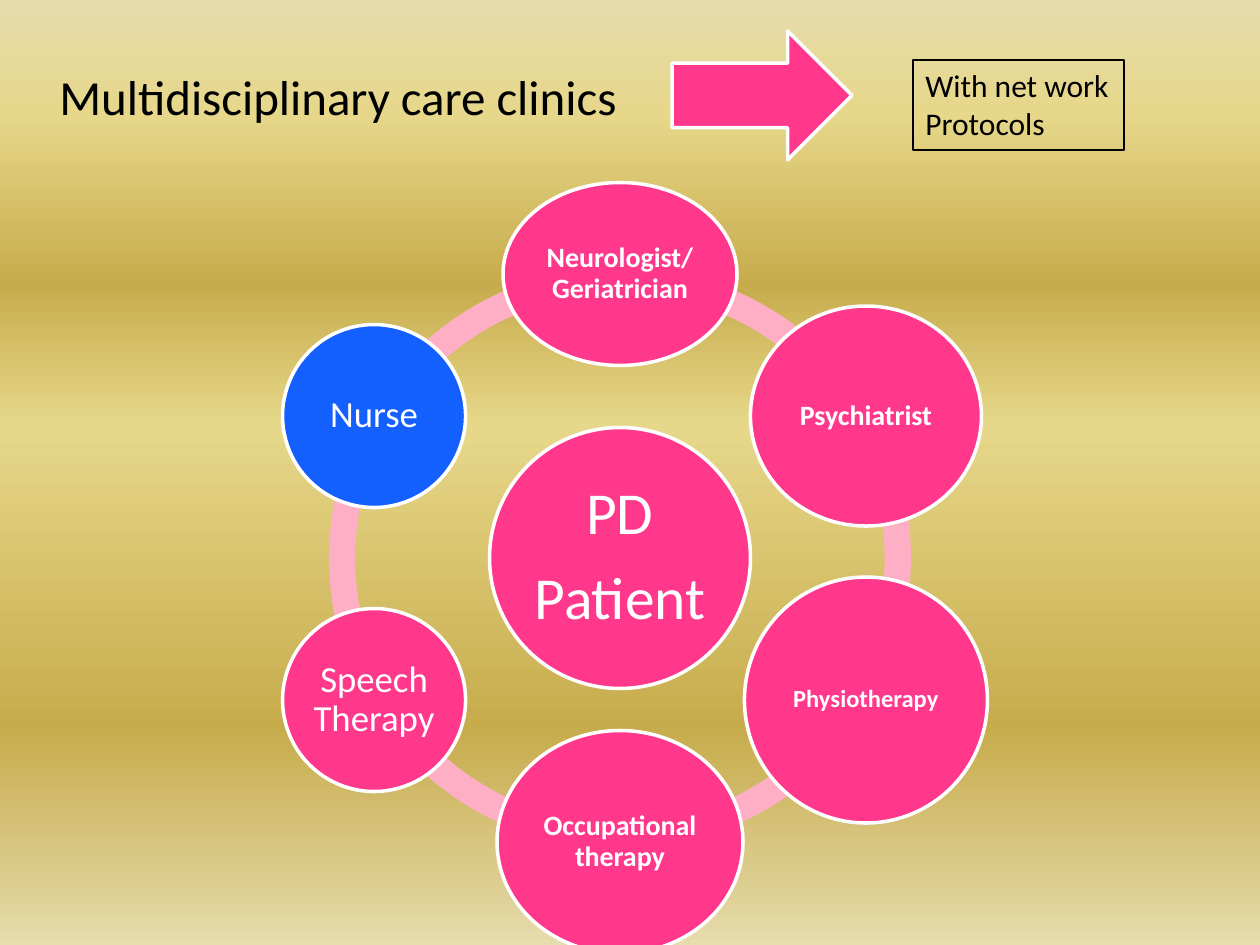
import math

from lxml import etree
from pptx import Presentation
from pptx import util as u
from pptx.dml.color import RGBColor
from pptx.enum import shapes, text
from pptx.oxml.ns import qn

EMU_PER_PX = 914400 / 126
WIDTH, HEIGHT = 1260, 945
HUB = (620, 558)
ORBIT = 284
RING_SIZE = 582

COLORS = {
    "pink": "FF388C",
    "pale_pink": "FFAFC5",
    "blue": "1460FF",
    "white": "FFFFFF",
    "black": "000000",
}
BACKDROP = [(0, "E6DCAC"), (12, "E6D78A"), (30, "C7AC4C"),
            (45, "E6D78A"), (77, "C7AC4C"), (100, "E6DCAC")]

# Clockwise from the top: label, width, height, font size, bold, fill
TEAM = [
    ("Neurologist/Geriatrician", 234, 183, 16, True, "pink"),
    ("Psychiatrist", 231, 220, 16, True, "pink"),
    ("Physiotherapy", 243, 246, 14, True, "pink"),
    ("Occupational therapy", 246, 223, 16, True, "pink"),
    ("Speech Therapy", 183, 183, 21, False, "pink"),
    ("Nurse", 183, 183, 21, False, "blue"),
]


def px(length):
    return u.Emu(round(length * EMU_PER_PX))


def rgb(name):
    return RGBColor.from_string(COLORS[name])


def write(frame, lines, size, color="black", bold=False, align=None,
          spacing=None, gap=0):
    """Fill a text frame, one paragraph per line, with gap points between."""
    for i, line in enumerate(lines):
        paragraph = frame.paragraphs[0] if i == 0 else frame.add_paragraph()
        paragraph.alignment = align
        paragraph.line_spacing = spacing
        if i:
            paragraph.space_before = u.Pt(gap)
        run = paragraph.add_run()
        run.text = line
        run.font.name = "Calibri"
        run.font.size = u.Pt(size)
        run.font.bold = bold
        run.font.color.rgb = rgb(color)


def paint_backdrop(slide):
    fill = slide.background.fill
    fill.gradient()
    fill.gradient_angle = 270
    stops = slide.element.find(".//" + qn("a:gsLst"))
    for stop in list(stops):
        stops.remove(stop)
    for percent, color in BACKDROP:
        stop = etree.SubElement(stops, qn("a:gs"), pos=str(percent * 1000))
        etree.SubElement(stop, qn("a:srgbClr"), val=color)


def add_solid(slide, kind, left, top, width, height, fill, outlined=True):
    solid = slide.shapes.add_shape(
        kind, px(left), px(top), px(width), px(height))
    solid.shadow.inherit = False
    solid.fill.solid()
    solid.fill.fore_color.rgb = rgb(fill)
    if outlined:
        solid.line.color.rgb = rgb("white")
        solid.line.width = u.Pt(2)
    else:
        solid.line.fill.background()
    return solid


def add_ring(slide):
    """Six 60 degree arcs; adjustments count 100000 per unit, 60000 per degree."""
    for i in range(6):
        start = (210 + 60 * i) % 360
        arc = add_solid(slide, shapes.MSO_SHAPE.BLOCK_ARC,
                        HUB[0] - RING_SIZE / 2, HUB[1] - RING_SIZE / 2,
                        RING_SIZE, RING_SIZE, "pale_pink", outlined=False)
        arc.adjustments[0] = start * 0.6
        arc.adjustments[1] = (start + 60) % 360 * 0.6
        arc.adjustments[2] = 0.045


def add_circle(slide, center, width, height, lines, size, bold=False,
               fill="pink", inset=3, gap=0):
    circle = add_solid(slide, shapes.MSO_SHAPE.OVAL, center[0] - width / 2,
                       center[1] - height / 2, width, height, fill)
    frame = circle.text_frame
    frame.word_wrap = True
    frame.vertical_anchor = text.MSO_ANCHOR.MIDDLE
    frame.margin_left = frame.margin_right = px(inset)
    frame.margin_top = frame.margin_bottom = px(inset)
    write(frame, lines, size, color="white", bold=bold,
          align=text.PP_ALIGN.CENTER, spacing=0.9, gap=gap)


def add_team(slide):
    for i, (role, width, height, size, bold, fill) in enumerate(TEAM):
        angle = math.radians(60 * i - 90)
        center = (HUB[0] + ORBIT * math.cos(angle) * 1.0,
                  HUB[1] + ORBIT * math.sin(angle))
        add_circle(slide, center, width, height, [role], size, bold, fill)


def add_label(slide, left, top, width, height, lines, size, framed=False):
    label = slide.shapes.add_textbox(
        px(left), px(top), px(width), px(height))
    label.text_frame.word_wrap = False
    label.text_frame.auto_size = text.MSO_AUTO_SIZE.SHAPE_TO_FIT_TEXT
    if framed:
        label.line.color.rgb = rgb("black")
        label.line.width = u.Pt(0.75)
    write(label.text_frame, lines, size)


def main():
    deck = Presentation()
    deck.slide_width, deck.slide_height = px(WIDTH), px(HEIGHT)
    slide = deck.slides.add_slide(deck.slide_layouts[6])

    paint_backdrop(slide)
    add_ring(slide)
    add_circle(slide, HUB, 261, 261, ["PD", "Patient"], 34, inset=6, gap=12)
    add_team(slide)
    add_label(slide, 47, 60, 590, 72, ["Multidisciplinary care clinics"], 28)
    add_solid(slide, shapes.MSO_SHAPE.RIGHT_ARROW, 672, 31, 180, 129, "pink")
    add_label(slide, 913, 60, 211, 90, ["With net work", "Protocols"], 18,
              framed=True)
    deck.save("out.pptx")


if __name__ == "__main__":
    main()
